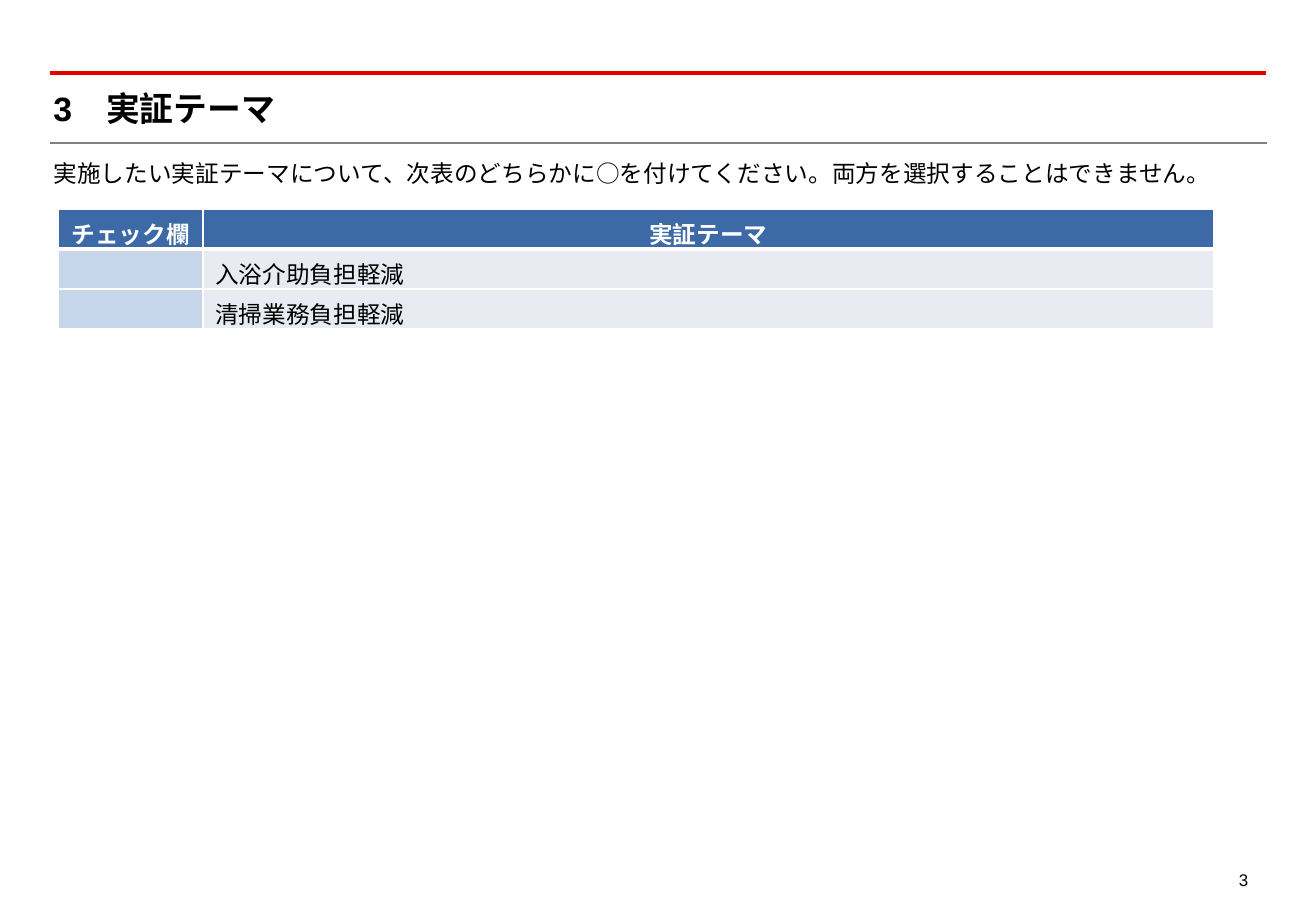
from dataclasses import dataclass

from lxml.etree import SubElement
from pptx import Presentation
from pptx.dml.color import RGBColor as Rgb
from pptx.enum.shapes import MSO_CONNECTOR as Connector
from pptx.enum.text import MSO_ANCHOR as Anchor, PP_ALIGN as Align
from pptx.oxml import parse_xml
from pptx.oxml.ns import nsdecls, qn
from pptx.util import Inches, Pt


@dataclass(frozen=True)
class Theme:
    font: str = "Arial"
    title_size: float = 20
    body_size: float = 14
    page_size: float = 10
    text: str = "000000"
    white: str = "FFFFFF"
    red: str = "E60000"
    gray: str = "808080"
    header_fill: str = "3D6AA7"
    check_fill: str = "C7D6EA"
    topic_fill: str = "E8EBF1"


class SlideBuilder:
    def __init__(self, slide, theme):
        self.slide = slide
        self.theme = theme

    def style(self, paragraph, size, color, bold=False, align=Align.LEFT, spacing=1.2):
        paragraph.alignment = align
        paragraph.line_spacing = spacing
        font = paragraph.font
        font.name, font.size, font.bold = self.theme.font, Pt(size), bold
        font.color.rgb = Rgb.from_string(color)

    def text(self, words, box, size, anchor=Anchor.TOP, inset=(0, 0), **style):
        frame = self.slide.shapes.add_textbox(*map(Inches, box)).text_frame
        frame.word_wrap = True
        frame.vertical_anchor = anchor
        frame.margin_left = frame.margin_right = Inches(inset[0])
        frame.margin_top = frame.margin_bottom = Inches(inset[1])
        frame.text = words
        self.style(frame.paragraphs[0], size, self.theme.text, **style)

    def rule(self, left, right, y, color, width):
        line = self.slide.shapes.add_connector(
            Connector.STRAIGHT, Inches(left), Inches(y), Inches(right), Inches(y))
        line.line.color.rgb = Rgb.from_string(color)
        line.line.width = Pt(width)
        SubElement(line._element.spPr, qn("a:effectLst"))

    def borders(self, cell, top, bottom):
        """Draw white cell borders; top and bottom are widths in points."""
        properties = cell._tc.get_or_add_tcPr()
        for index, (side, width) in enumerate(
                {"L": 1, "R": 1, "T": top, "B": bottom}.items()):
            properties.insert(index, parse_xml(
                f'<a:ln{side} {nsdecls("a")} w="{Pt(width)}"><a:solidFill>'
                f'<a:srgbClr val="{self.theme.white}"/></a:solidFill></a:ln{side}>'))

    def table(self, rows, left, top, widths, row_height):
        theme = self.theme
        table = self.slide.shapes.add_table(
            len(rows), len(widths), Inches(left), Inches(top),
            Inches(sum(widths)), Inches(row_height * len(rows))).table
        for column, width in zip(table.columns, widths):
            column.width = Inches(width)
        for r, row in enumerate(rows):
            header = r == 0
            for c, words in enumerate(row):
                cell = table.cell(r, c)
                cell.text = words
                cell.margin_top = cell.margin_bottom = 0
                self.style(cell.text_frame.paragraphs[0], theme.body_size,
                           theme.white if header else theme.text, bold=header,
                           align=Align.CENTER if header else Align.LEFT)
                body_fill = theme.topic_fill if c else theme.check_fill
                cell.fill.solid()
                cell.fill.fore_color.rgb = Rgb.from_string(
                    theme.header_fill if header else body_fill)
                self.borders(cell, top=3 if r == 1 else 1, bottom=3 if header else 1)


def main():
    presentation = Presentation()
    presentation.slide_width = Inches(10.83)
    presentation.slide_height = Inches(7.5)
    theme = Theme()
    page = SlideBuilder(
        presentation.slides.add_slide(presentation.slide_layouts[6]), theme)

    page.rule(0.41, 10.42, 0.6, theme.red, 2)
    page.rule(0.41, 10.43, 1.18, theme.gray, 1.25)
    page.text("3　実証テーマ", (0.44, 0.72, 9.91, 0.34), theme.title_size,
              anchor=Anchor.MIDDLE, bold=True, spacing=1.0)
    page.text("実施したい実証テーマについて、次表のどちらかに○を付けてください。"
              "両方を選択することはできません。",
              (0.44, 1.26, 9.91, 0.25), theme.body_size)
    page.table([("チェック欄", "実証テーマ"),
                ("", "入浴介助負担軽減"),
                ("", "清掃業務負担軽減")],
               left=0.48, top=1.72, widths=(1.19, 8.32), row_height=0.33)
    page.text("3", (9.93, 7.08, 0.44, 0.28), theme.page_size,
              inset=(0.1, 0.05), align=Align.RIGHT)

    presentation.save("out.pptx")


if __name__ == "__main__":
    main()
